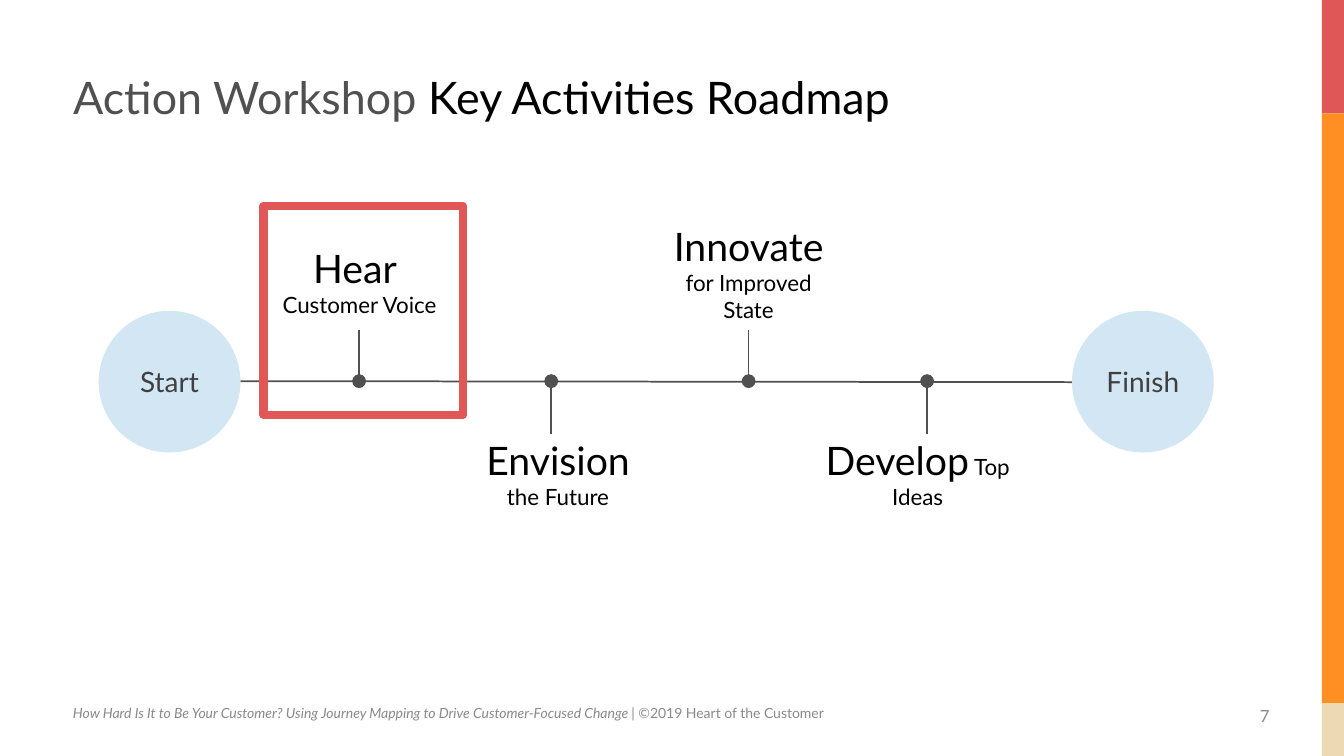
"""Build the Action Workshop key activities roadmap slide."""
import pptx
import pptx.dml.color
import pptx.enum.shapes
import pptx.enum.text
import pptx.oxml
import pptx.oxml.ns
import pptx.util

PX = 9525
THEME = {
    "font": "Lato",
    "red": "DF5757", "orange": "FF8F22", "sand": "EDD9B4", "blue": "D2E6F4",
    "black": "000000", "gray": "505050", "dark": "404040", "muted": "898989",
    "title": 32, "activity": 28, "terminal": 20, "detail": 16, "number": 12, "footer": 10,
}
COLORS = {name: pptx.dml.color.RGBColor.from_string(THEME[name])
          for name in ("red", "orange", "sand", "blue", "black", "gray", "dark", "muted")}
ALIGN = pptx.enum.text.PP_ALIGN
ANCHOR = pptx.enum.text.MSO_ANCHOR
SHAPE = pptx.enum.shapes.MSO_SHAPE


def write_text(shape, runs, alignment=ALIGN.CENTER, anchor=ANCHOR.TOP):
    """Fill one paragraph with (text, size, color, italic) runs; a newline ends a line."""
    frame_format = {"word_wrap": True, "vertical_anchor": anchor,
                    "auto_size": pptx.enum.text.MSO_AUTO_SIZE.NONE}
    for name, value in frame_format.items():
        setattr(shape.text_frame, name, value)
    paragraph = shape.text_frame.paragraphs[0]
    paragraph.alignment = alignment
    for text, size, color, italic in runs:
        run = paragraph.add_run()
        run.text = text.rstrip("\n")
        run_format = {"name": THEME["font"], "size": pptx.util.Pt(THEME[size]), "italic": italic}
        for name, value in run_format.items():
            setattr(run.font, name, value)
        run.font.color.rgb = COLORS[color]
        if text.endswith("\n"):
            paragraph.add_line_break()
    return paragraph


def add_line(slide, *ends):
    """Draw a plain roadmap line."""
    line = slide.shapes.add_connector(
        pptx.enum.shapes.MSO_CONNECTOR.STRAIGHT, *(value * PX for value in ends))
    line.line.color.rgb = COLORS["gray"]
    line.line.width = pptx.util.Pt(1.25)
    properties = line._element.spPr
    properties.append(pptx.oxml.parse_xml(f"<a:effectLst {pptx.oxml.ns.nsdecls('a')}/>"))
    return line


presentation = pptx.Presentation()
presentation.slide_width = 1280 * PX
presentation.slide_height = 720 * PX
slide = presentation.slides.add_slide(presentation.slide_layouts[5])

bar_top = 0
for bar_height, color in ((108, "red"), (562, "orange"), (50, "sand")):
    bar = slide.shapes.add_shape(
        SHAPE.RECTANGLE, 1259 * PX, bar_top * PX, 21 * PX, bar_height * PX)
    bar.shadow.inherit = False
    bar.fill.solid()
    bar.fill.fore_color.rgb = COLORS[color]
    bar.line.fill.background()
    bar_top += bar_height

number = slide.shapes.add_textbox(1185 * PX, 667 * PX, 39 * PX, 29 * PX)
write_text(number, [("7", "number", "muted", False)])
footer = slide.shapes.add_textbox(60 * PX, 666 * PX, 984 * PX, 26 * PX)
write_text(footer, [
    ("How Hard Is It to Be Your Customer? Using Journey Mapping to Drive "
     "Customer-Focused Change ", "footer", "muted", True),
    ("| ©2019 Heart of the Customer", "footer", "muted", False),
], ALIGN.LEFT)

title = slide.shapes.title
for name, value in {"left": 60, "top": 0, "width": 1097, "height": 123}.items():
    setattr(title, name, value * PX)
title_paragraph = write_text(title, [
    ("Action Workshop ", "title", "gray", False),
    ("Key Activities Roadmap", "title", "black", False),
], ALIGN.LEFT, ANCHOR.BOTTOM)
title_paragraph.line_spacing = 0.9

road_y = 363
add_line(slide, 229, road_y, 1048, road_y + 1)

for label, left in (("Start", 94), ("Finish", 1021)):
    terminal = slide.shapes.add_shape(SHAPE.OVAL, left * PX, 296 * PX, 135 * PX, 135 * PX)
    terminal.shadow.inherit = False
    terminal.fill.solid()
    terminal.fill.fore_color.rgb = COLORS["blue"]
    terminal.line.fill.background()
    write_text(terminal, [(label, "terminal", "dark", False)], anchor=ANCHOR.MIDDLE)

activities = (
    ("Hear \n", "Customer Voice", 342, -49, (194, 227, 297, 81), ANCHOR.BOTTOM),
    ("Envision\n", "the Future", 525, 50, (448, 411, 167, 81), ANCHOR.TOP),
    ("Innovate", " for Improved State", 713, -49, (618, 207, 190, 107), ANCHOR.TOP),
    ("Develop", " Top Ideas", 883, 50, (775, 411, 198, 81), ANCHOR.TOP),
)
for activity, detail, stem_x, stem_length, box, anchor in activities:
    stem = add_line(slide, stem_x, road_y, stem_x, road_y + stem_length)
    stem.line._get_or_add_ln().append(pptx.oxml.parse_xml(
        f"<a:headEnd {pptx.oxml.ns.nsdecls('a')} type='oval' w='lg' len='lg'/>"))
    caption = slide.shapes.add_textbox(*(value * PX for value in box))
    write_text(caption, [(activity, "activity", "black", False),
                         (detail, "detail", "black", False)], anchor=anchor)

highlight = slide.shapes.add_shape(SHAPE.RECTANGLE, 251 * PX, 196 * PX, 190 * PX, 199 * PX)
highlight.shadow.inherit = False
highlight.fill.background()
highlight.line.color.rgb = COLORS["red"]
highlight.line.width = pptx.util.Pt(6)

presentation.save("out.pptx")
